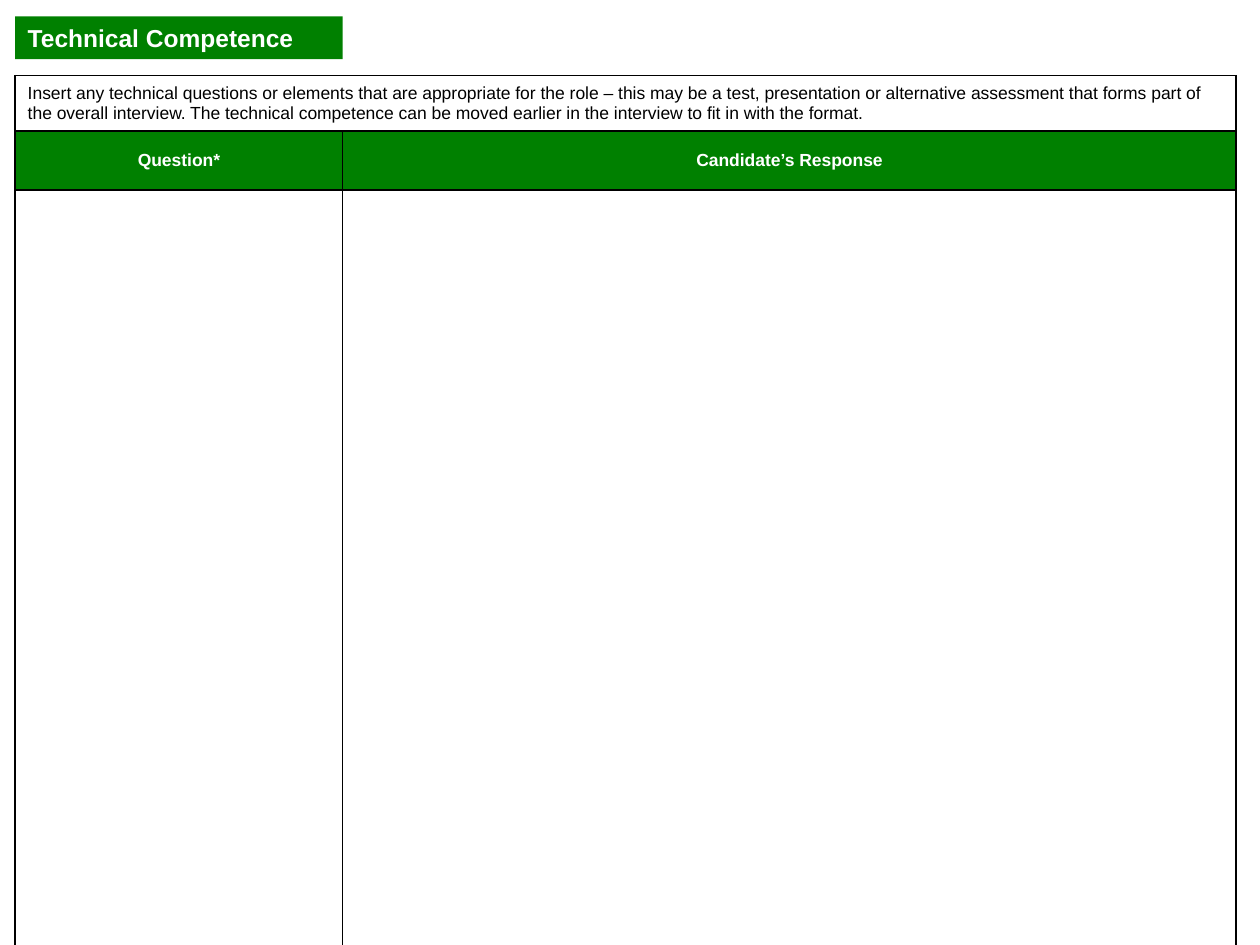
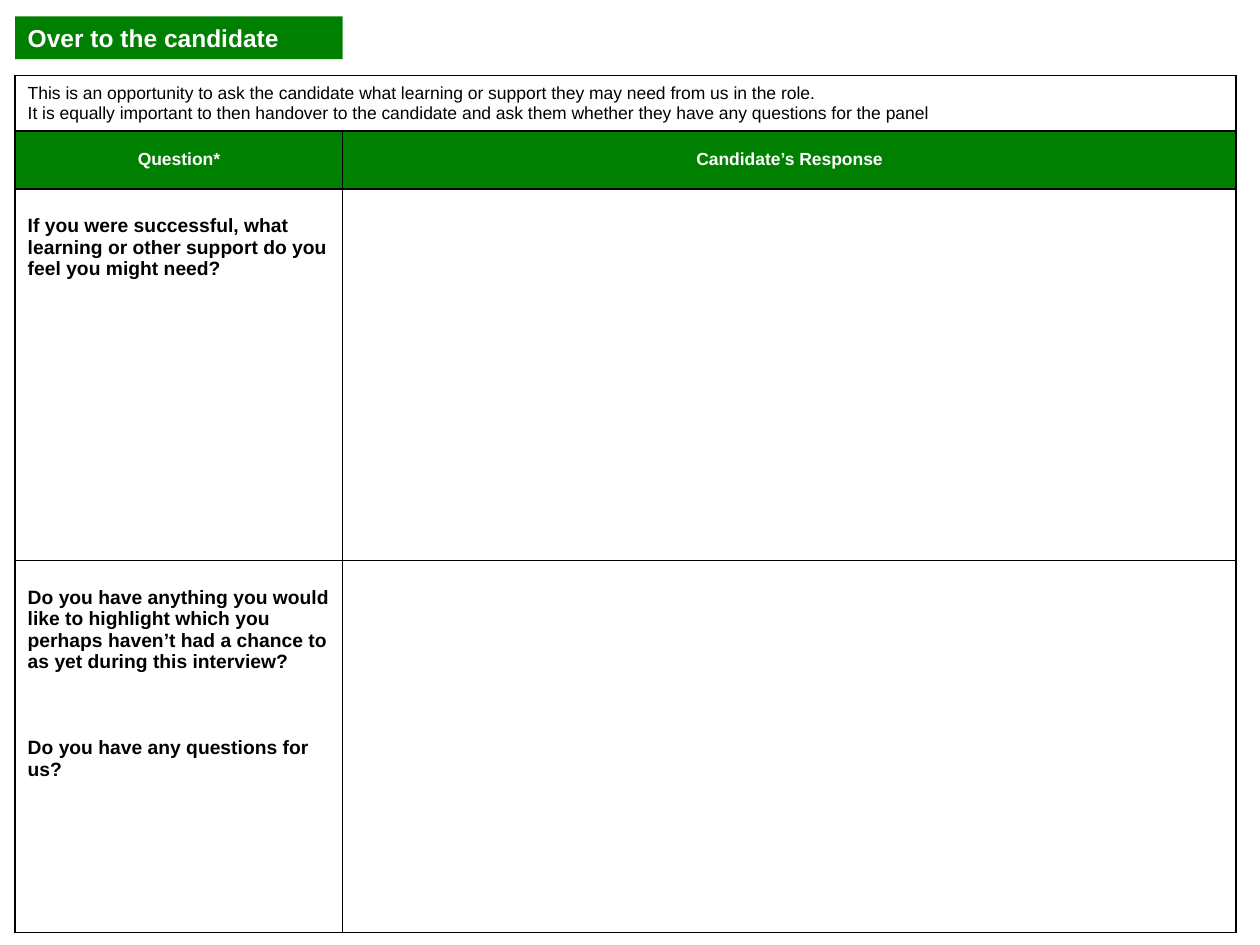
"""Build two interview form slides, each with a title band and a table."""
from lxml.etree import SubElement
from pptx import Presentation
from pptx.dml.color import RGBColor
from pptx.enum.text import MSO_ANCHOR as Anchor, MSO_AUTO_SIZE as Fit, PP_ALIGN as Align
from pptx.oxml.ns import qn
from pptx.util import Inches, Pt

HEX = {"green": "008000", "white": "FFFFFF", "black": "000000"}
FONT = "Arial"
HEADS = ["Question*", "Candidate’s Response"]
COLS = [2.6, 7.09]
LEFT, TOP, GRID = 0.12, 0.13, 0.6
BAND, INTRO = 0.34, 0.44
INSET, GAP = 0.21, 37

FORMS = [
    {
        "title": "Technical Competence",
        "intro": [
            "Insert any technical questions or elements that are appropriate for the role – "
            "this may be a test, presentation or alternative assessment that forms part of "
            "the overall interview. The technical competence can be moved earlier in the "
            "interview to fit in with the format."
        ],
        "asks": [[]],
        "head": 0.47,
        "row": 6.11,
    },
    {
        "title": "Over to the candidate",
        "intro": [
            "This is an opportunity to ask the candidate what learning or support they may "
            "need from us in the role.",
            "It is equally important to then handover to the candidate and ask them whether "
            "they have any questions for the panel",
        ],
        "asks": [
            ["If you were successful, what learning or other support do you feel you might need?"],
            [
                "Do you have anything you would like to highlight which you perhaps haven’t "
                "had a chance to as yet during this interview?",
                "Do you have any questions for us?",
            ],
        ],
        "head": 0.46,
        "row": 2.95,
    },
]


def tint(name):
    return RGBColor.from_string(HEX[name])


def paint(part, name):
    part.fill.solid()
    part.fill.fore_color.rgb = tint(name)


def write(frame, lines, size, color="black", bold=False, align=Align.LEFT, gap=0):
    for i, line in enumerate(lines):
        para = frame.add_paragraph() if i else frame.paragraphs[0]
        para.alignment = align
        para.space_before = Pt(gap if i else 0)
        run = para.add_run()
        run.text = line
        font = run.font
        font.name, font.size, font.bold = FONT, Pt(size), bold
        font.color.rgb = tint(color)


def edge(cell):
    props = cell._tc.get_or_add_tcPr()
    for side in ("lnL", "lnR", "lnT", "lnB"):
        line = SubElement(props, qn("a:" + side), w=str(Pt(1)))
        fill = SubElement(line, qn("a:solidFill"))
        SubElement(fill, qn("a:srgbClr"), val=HEX["black"])


def add_title(slide, text):
    band = slide.shapes.title
    band.left, band.top = Inches(LEFT), Inches(TOP)
    band.width, band.height = Inches(COLS[0]), Inches(BAND)
    paint(band, "green")
    frame = band.text_frame
    frame.word_wrap, frame.auto_size = True, Fit.NONE
    frame.vertical_anchor = Anchor.TOP
    write(frame, [text], 14, "white", True)


def add_grid(slide, form):
    rows = [INTRO, form["head"]] + [form["row"]] * len(form["asks"])
    table = slide.shapes.add_table(
        len(rows), len(COLS), Inches(LEFT), Inches(GRID),
        Inches(sum(COLS)), Inches(sum(rows)),
    ).table
    table.first_row = table.horz_banding = False
    for col, width in zip(table.columns, COLS):
        col.width = Inches(width)
    for row, height in zip(table.rows, rows):
        row.height = Inches(height)
    for r in range(len(rows)):
        for c in range(len(COLS)):
            cell = table.cell(r, c)
            edge(cell)
            paint(cell, "green" if r == 1 else "white")
            cell.vertical_anchor = Anchor.MIDDLE if r < 2 else Anchor.TOP

    intro = table.cell(0, 0)
    intro.merge(table.cell(0, 1))
    write(intro.text_frame, form["intro"], 10)
    for c, head in enumerate(HEADS):
        write(table.cell(1, c).text_frame, [head], 10, "white", True, Align.CENTER)
    for r, asks in enumerate(form["asks"], 2):
        cell = table.cell(r, 0)
        cell.margin_top = Inches(INSET)
        write(cell.text_frame, asks, 11, bold=True, gap=GAP)


def main():
    deck = Presentation()
    deck.slide_width, deck.slide_height = Inches(10), Inches(7.5)
    for form in FORMS:
        slide = deck.slides.add_slide(deck.slide_layouts[5])
        add_title(slide, form["title"])
        add_grid(slide, form)
    deck.save("out.pptx")


if __name__ == "__main__":
    main()
